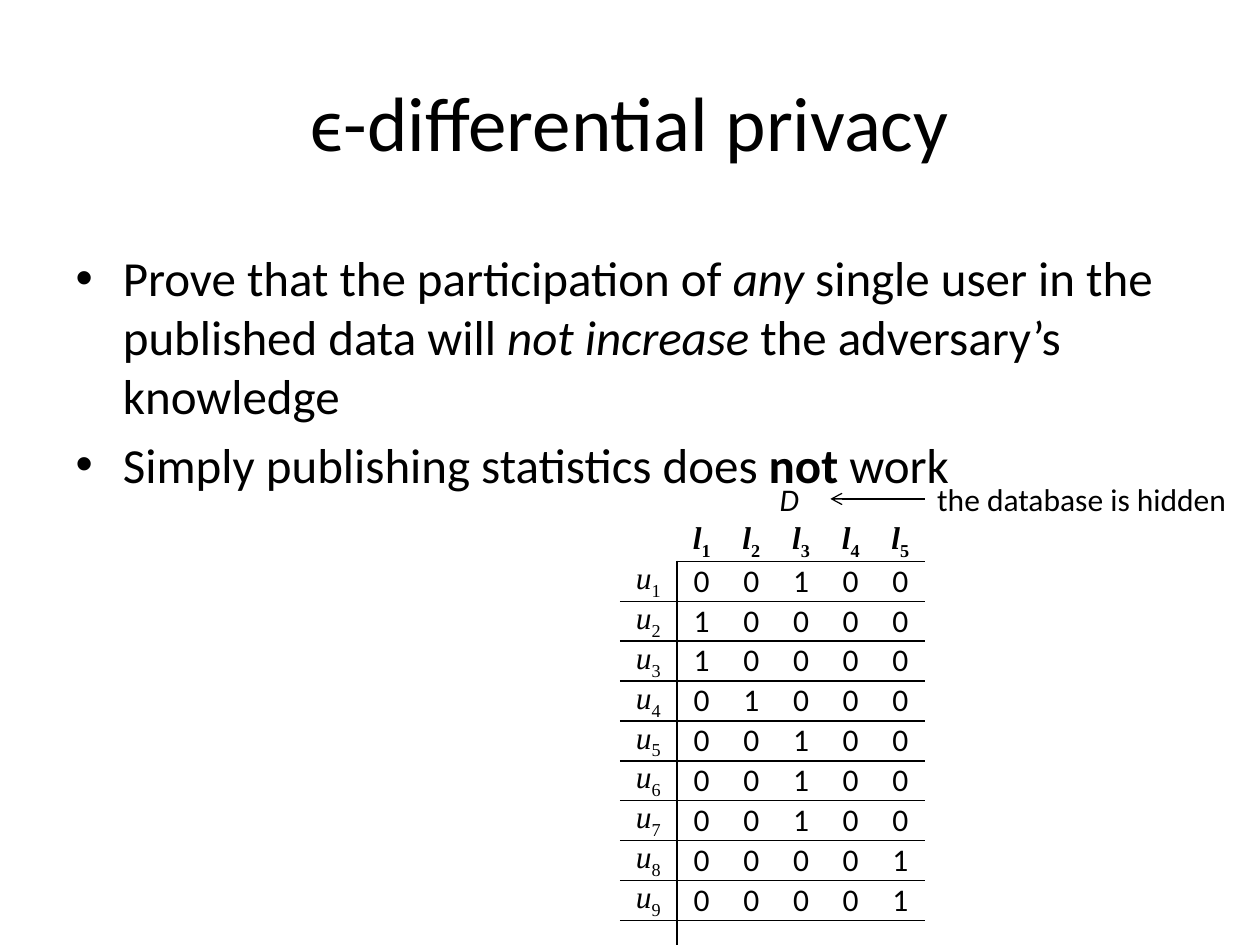
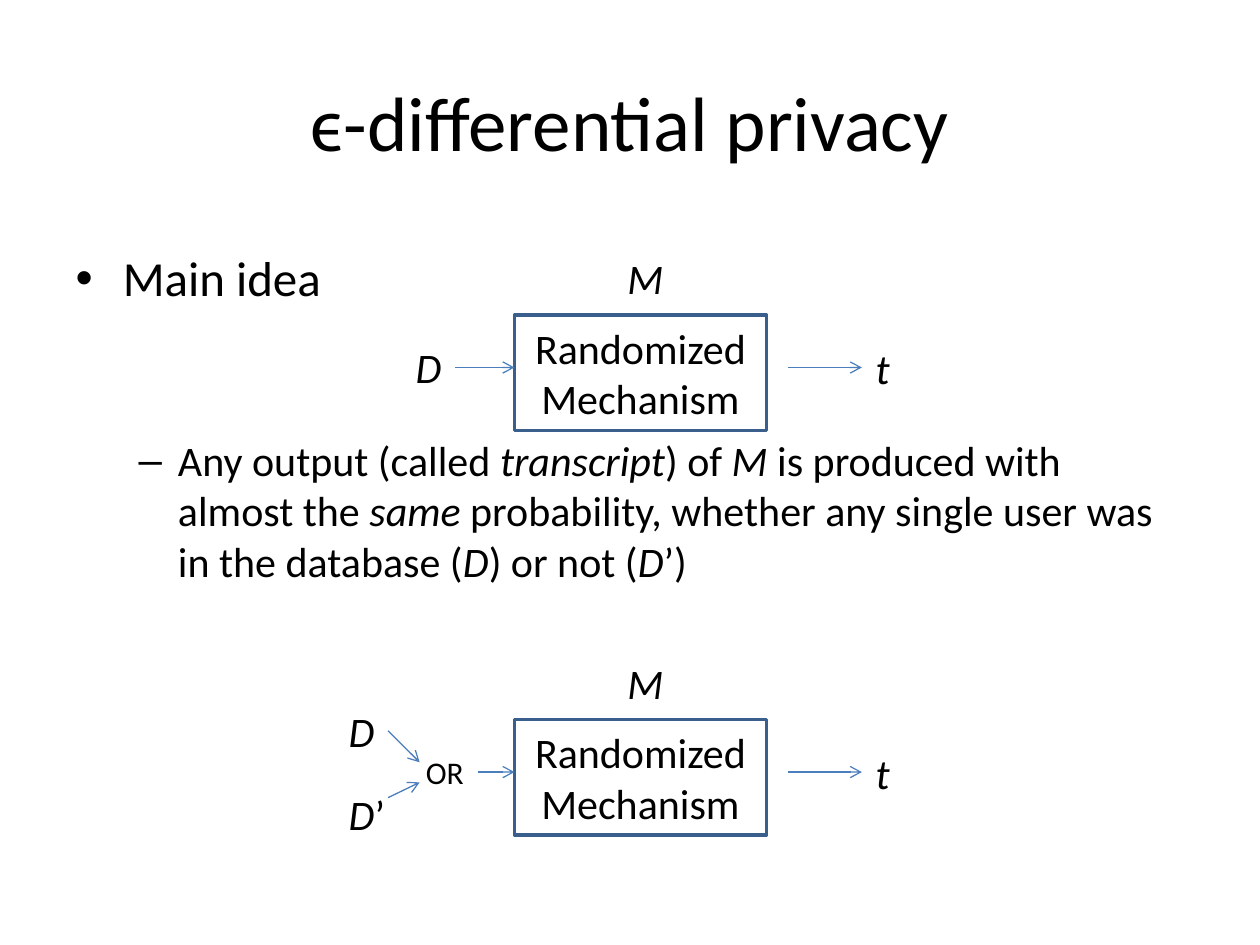
from dataclasses import dataclass

from lxml.etree import SubElement
from pptx import Presentation
from pptx.dml.color import RGBColor
from pptx.enum.shapes import MSO_CONNECTOR as Line, MSO_SHAPE as Shape
from pptx.enum.text import MSO_ANCHOR as Anchor, MSO_AUTO_SIZE as Fit, PP_ALIGN as Align
from pptx.oxml.ns import qn
from pptx.util import Pt


@dataclass(frozen=True)
class Theme:
    black: str = "000000"
    frame: str = "3A5F8C"
    arrow: str = "4B7EBC"
    sans: str = "Calibri"
    serif: str = "Times New Roman"
    title: int = 44
    body: int = 28
    sub: int = 24
    small: int = 18


THEME = Theme()
ITALIC = {"italic": True}
BOLD = {"bold": True}

# A run is (text, format); a paragraph is (level, space before, runs).
TITLE = "ϵ-differential privacy"
CLAIMS = [
    (0, None, [("Prove that the participation of ", {}), ("any", ITALIC),
               (" single user in the published data will ", {}),
               ("not increase", ITALIC), (" the adversary’s knowledge", {})]),
    (0, None, [("Simply publishing statistics does ", {}), ("not", BOLD), (" work", {})]),
]
IDEA = [
    (0, None, [("Main idea", {})]),
    (1, 73, [("Any output (called ", {}), ("transcript", ITALIC), (") of ", {}),
             ("M", ITALIC), (" is produced with almost the ", {}), ("same", ITALIC),
             (" probability, whether any single user was in the database (", {}),
             ("D", ITALIC), (") or not (", {}), ("D", ITALIC), ("’)", {})]),
]
USERS = ["00100", "10000", "10000", "01000", "00100",
         "00100", "00100", "00001", "00001"]

# Places in points
TITLE_BOX = (36, 24, 648, 90)
CLAIM_BOX = (36, 138, 648, 138)
IDEA_BOX = (36, 138, 648, 360)
GRID_LEFT, GRID_TOP = 354.2, 298
HEAD_COL, COL, ROW = 32.6, 28.4, 21.6
BOX_LEFT, BOX_WIDE, BOX_HIGH = 294, 144, 66
FLOW_TOPS = (180, 411.2)


def rgb(code):
    return RGBColor.from_string(code)


def write(para, runs, size, font=THEME.sans, **base):
    for text, look in runs:
        look = dict(base, **look)
        shift = look.pop("shift", None)
        run = para.add_run()
        run.text = text
        for key, value in dict(look, name=font, size=Pt(size)).items():
            setattr(run.font, key, value)
        run.font.color.rgb = rgb(THEME.black)
        if shift:
            run._r.get_or_add_rPr().set("baseline", str(shift))


def place(shape, box):
    for key, value in zip(("left", "top", "width", "height"), box):
        setattr(shape, key, Pt(value))


def start(deck, paras, box):
    """Add a slide with the shared title and its list."""
    slide = deck.slides.add_slide(deck.slide_layouts[1])
    title, body = slide.shapes.title, slide.placeholders[1]
    place(title, TITLE_BOX)
    place(body, box)
    title.text_frame.vertical_anchor = Anchor.MIDDLE
    title.text_frame.paragraphs[0].alignment = Align.CENTER
    write(title.text_frame.paragraphs[0], [(TITLE, {})], THEME.title)
    frame = body.text_frame
    frame.auto_size = Fit.NONE
    for i, (level, gap, runs) in enumerate(paras):
        para = frame.add_paragraph() if i else frame.paragraphs[0]
        para.level = level
        if gap:
            para.space_before = Pt(gap)
        write(para, runs, THEME.sub if level else THEME.body)
    return slide


def label(slide, runs, box, size=THEME.sub, **base):
    text = slide.shapes.add_textbox(*map(Pt, box)).text_frame
    text.word_wrap = False
    text.auto_size = Fit.SHAPE_TO_FIT_TEXT
    write(text.paragraphs[0], runs, size, **base)


def arrow(slide, x1, y1, x2, y2, color=THEME.arrow):
    link = slide.shapes.add_connector(Line.STRAIGHT, *map(Pt, (x1, y1, x2, y2)))
    link.line.width = Pt(0.75)
    link.line.color.rgb = rgb(color)
    SubElement(link.line._get_or_add_ln(), qn("a:tailEnd"), type="arrow")
    SubElement(link._element.spPr, qn("a:effectLst"))


def border(cell, sides):
    """Rule the named sides in black and leave the others bare."""
    props = cell._tc.get_or_add_tcPr()
    for side in "LRTB":
        edge = SubElement(props, qn("a:ln" + side), w=str(Pt(1)))
        if side in sides:
            fill = SubElement(edge, qn("a:solidFill"))
            SubElement(fill, qn("a:srgbClr"), val=THEME.black)
        else:
            SubElement(edge, qn("a:noFill"))
    cell.fill.background()


def indexed(letter, number):
    return [(letter, ITALIC), (str(number), {"shift": -25000})]


def fill_cell(cell, row, col):
    para = cell.text_frame.paragraphs[0]
    para.alignment = Align.CENTER
    para.font.size = Pt(THEME.small)
    if row > len(USERS) or row == col == 0:
        return
    if row == 0:
        write(para, indexed("l", col), THEME.small, THEME.serif, bold=True)
    elif col == 0:
        write(para, indexed("u", row), THEME.small, THEME.serif)
    else:
        write(para, [(USERS[row - 1][col - 1], {})], THEME.small)


def add_grid(slide):
    rows, cols = len(USERS) + 2, len(USERS[0]) + 1
    grid = slide.shapes.add_table(
        rows, cols, Pt(GRID_LEFT), Pt(GRID_TOP),
        Pt(HEAD_COL + COL * (cols - 1)), Pt(ROW * rows)).table
    grid.first_row = grid.horz_banding = False
    for c in range(cols):
        grid.columns[c].width = Pt(COL if c else HEAD_COL)
    for r in range(rows):
        grid.rows[r].height = Pt(ROW)
        for c in range(cols):
            cell = grid.cell(r, c)
            cell.margin_top = cell.margin_bottom = 0
            cell.vertical_anchor = Anchor.MIDDLE
            fill_cell(cell, r, c)
            sides = ""
            if r and c < 2:
                sides += "L" if c else "R"
            if r > 1 or (r and c):
                sides += "T"
            if r < rows - 1 and (r or c):
                sides += "B"
            border(cell, sides)


def add_flow(slide, top, entry):
    """Draw the mechanism with its input arrow, name and output."""
    mid = top + 30
    box = slide.shapes.add_shape(
        Shape.RECTANGLE, *map(Pt, (BOX_LEFT, top, BOX_WIDE, BOX_HIGH)))
    box.shadow.inherit = False
    box.fill.background()
    box.line.color.rgb = rgb(THEME.frame)
    box.line.width = Pt(2)
    frame = box.text_frame
    frame.word_wrap = True
    frame.vertical_anchor = Anchor.MIDDLE
    frame.paragraphs[0].alignment = Align.CENTER
    write(frame.paragraphs[0], [("Randomized Mechanism", {})], THEME.sub)
    label(slide, [("M", ITALIC)], (351.4, top - 39.2, 35.3, 36))
    label(slide, [("t", ITALIC)], (493.2, top + 12.3, 22.3, 36))
    arrow(slide, entry, mid, BOX_LEFT, mid)
    arrow(slide, 450, mid, 492.5, mid)


def main():
    deck = Presentation()
    deck.slide_width, deck.slide_height = Pt(720), Pt(540)

    slide = start(deck, CLAIMS, CLAIM_BOX)
    add_grid(slide)
    label(slide, [("D", ITALIC)], (438.5, 270.7, 28, 28.8), THEME.small)
    label(slide, [("the database is hidden", {})], (528.5, 270.7, 189.4, 28.8), THEME.small)
    arrow(slide, 528.5, 285.1, 474.5, 285.1, THEME.black)

    slide = start(deck, IDEA, IDEA_BOX)
    for top, entry in zip(FLOW_TOPS, (260, 272.9)):
        add_flow(slide, top, entry)
    label(slide, [("D", ITALIC)], (230.4, 191.5, 29.5, 36))
    label(slide, [("D", ITALIC)], (192.2, 399.6, 29.5, 36))
    label(slide, [("D", ITALIC), ("’", {})], (192.2, 447.1, 35.3, 36))
    label(slide, [("OR", {})], (236.2, 427, 36.7, 28.8), THEME.small)
    arrow(slide, 221.8, 417.6, 239.8, 435.6)
    arrow(slide, 221.8, 455.8, 239.8, 447.1)
    deck.save("out.pptx")


if __name__ == "__main__":
    main()
